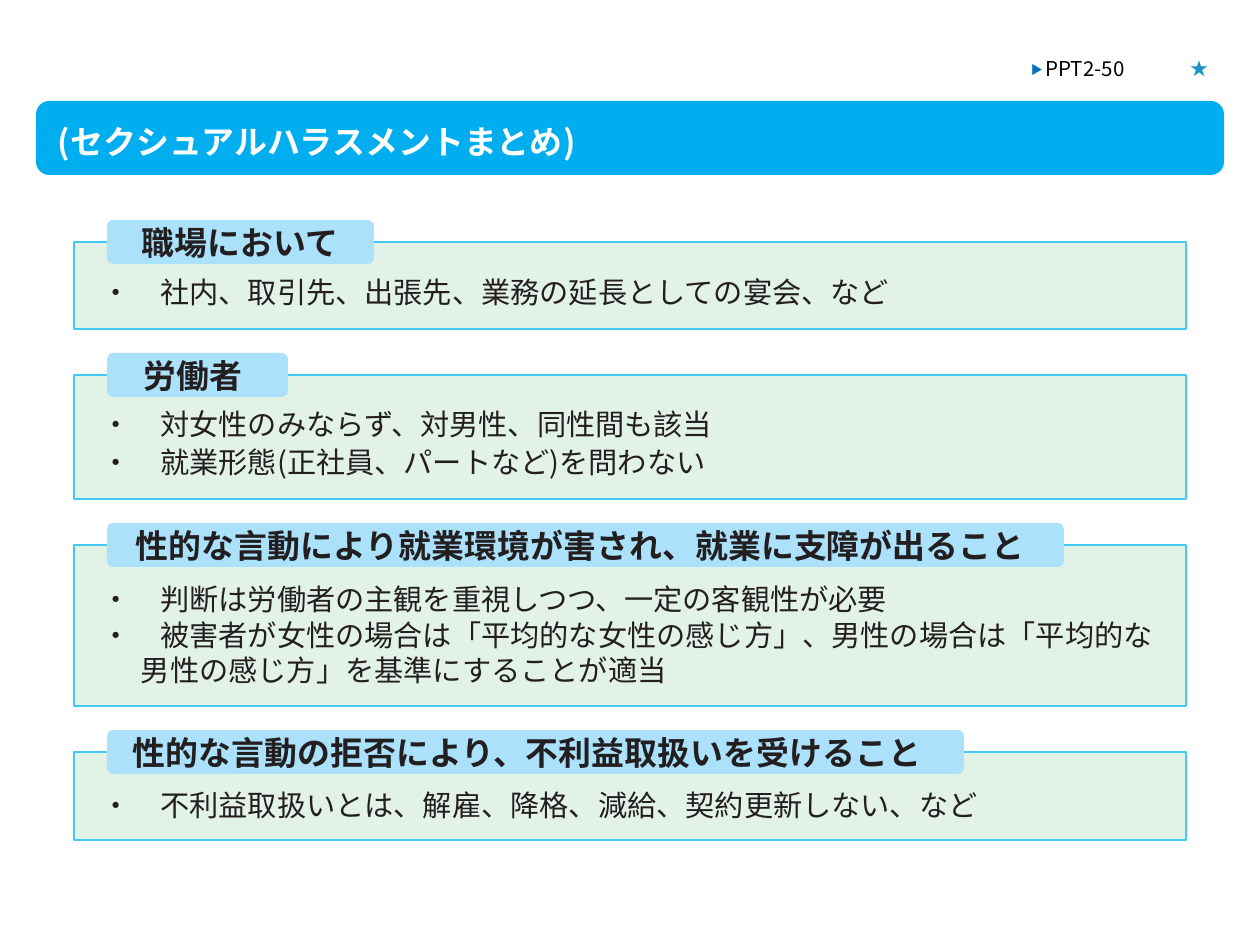
from dataclasses import dataclass

from lxml.etree import SubElement
from pptx import Presentation
from pptx.dml.color import RGBColor
from pptx.enum.shapes import MSO_SHAPE
from pptx.enum.text import MSO_ANCHOR, MSO_AUTO_SIZE, PP_ALIGN
from pptx.oxml.ns import qn
from pptx.util import Pt

EMU_PER_PX = 914400 / 126
FONT = "Noto Sans CJK JP"
COLORS = {
    "banner": "00AEEF",
    "panel": "E3F2E7",
    "border": "44C8F4",
    "tab": "ABE1FA",
    "ink": "231F20",
    "white": "FFFFFF",
    "black": "000000",
    "arrow": "0070C0",
    "star": "1B93C9",
}
PANEL_LEFT, PANEL_WIDTH = 74, 1112
TAB_LEFT, TAB_HEIGHT, TAB_RISE = 107, 44, 22
HANGING = 39


@dataclass(frozen=True)
class Section:
    heading: str
    points: tuple[str, ...]
    top: int
    height: int
    tab_width: int
    tab_inset: int
    text_inset: int
    gap: float = 0


SECTIONS = (
    Section("職場において", ("社内、取引先、出張先、業務の延長としての宴会、など",),
            242, 87, 267, 33, 32),
    Section("労働者",
            ("対女性のみならず、対男性、同性間も該当",
             "就業形態(正社員、パートなど)を問わない"),
            375, 124, 181, 35, 31, 1.2),
    Section("性的な言動により就業環境が害され、就業に支障が出ること",
            ("判断は労働者の主観を重視しつつ、一定の客観性が必要",
             "被害者が女性の場合は「平均的な女性の感じ方」、男性の場合は"
             "「平均的な男性の感じ方」を基準にすることが適当"),
            545, 161, 957, 27, 36),
    Section("性的な言動の拒否により、不利益取扱いを受けること",
            ("不利益取扱いとは、解雇、降格、減給、契約更新しない、など",),
            752, 88, 857, 24, 35),
)


def px(n: int) -> int:
    return round(n * EMU_PER_PX)


def rgb(name: str) -> RGBColor:
    return RGBColor.from_string(COLORS[name])


def style_run(r, size: float, color: str, bold: bool = False) -> None:
    r.font.size = Pt(size)
    r.font.bold = bold
    r.font.color.rgb = rgb(color)
    r.font.name = FONT
    SubElement(r._r.get_or_add_rPr(), qn("a:ea"), typeface=FONT)


def style_paragraph(p, size: float, spacing: float, color: str, bold: bool = False) -> None:
    p.alignment = PP_ALIGN.LEFT
    p.line_spacing = Pt(spacing)
    p.space_before = Pt(0)
    for r in p.runs:
        style_run(r, size, color, bold)


def set_frame(tf, anchor: MSO_ANCHOR, left: int = 0, top: int = 0, right: int = 0) -> None:
    tf.word_wrap = True
    tf.auto_size = MSO_AUTO_SIZE.NONE
    tf.vertical_anchor = anchor
    tf.margin_left, tf.margin_top, tf.margin_right = px(left), px(top), px(right)
    tf.margin_bottom = 0


def add_block(slide, kind: MSO_SHAPE, left: int, top: int, width: int, height: int,
              fill: str, radius: int = 0):
    sp = slide.shapes.add_shape(kind, px(left), px(top), px(width), px(height))
    sp.shadow.inherit = False
    sp.fill.solid()
    sp.fill.fore_color.rgb = rgb(fill)
    sp.line.fill.background()
    if radius:
        sp.adjustments[0] = round(radius / height, 2)
    return sp


def add_label(slide, left: int, top: int, width: int, height: int, text: str):
    tf = slide.shapes.add_textbox(px(left), px(top), px(width), px(height)).text_frame
    set_frame(tf, MSO_ANCHOR.TOP)
    p = tf.paragraphs[0]
    p.text = text
    return p


def add_title(slide) -> None:
    add_block(slide, MSO_SHAPE.ROUNDED_RECTANGLE, 36, 101, 1188, 74, "banner", 13)
    sp = slide.shapes.title
    sp.left, sp.top, sp.width, sp.height = px(58), px(120), px(810), px(42)
    tf = sp.text_frame
    tf.text = "(セクシュアルハラスメントまとめ)"
    set_frame(tf, MSO_ANCHOR.MIDDLE)
    style_paragraph(tf.paragraphs[0], 18.8, 22.5, "white", True)
    slide.shapes._spTree.append(sp._element)


def add_section(slide, s: Section) -> None:
    panel = add_block(slide, MSO_SHAPE.RECTANGLE, PANEL_LEFT, s.top, PANEL_WIDTH,
                      s.height, "panel")
    panel.line.color.rgb = rgb("border")
    panel.line.width = Pt(1.25)
    tf = panel.text_frame
    tf.text = "\n".join(f"・　{point}" for point in s.points)
    set_frame(tf, MSO_ANCHOR.TOP, 28, s.text_inset, 24)
    for i, p in enumerate(tf.paragraphs):
        style_paragraph(p, 16.7, 20.3, "ink")
        if i:
            p.space_before = Pt(s.gap)
        pPr = p._p.get_or_add_pPr()
        pPr.set("marL", str(px(HANGING)))
        pPr.set("indent", str(-px(HANGING)))

    tab = add_block(slide, MSO_SHAPE.ROUNDED_RECTANGLE, TAB_LEFT, s.top - TAB_RISE,
                    s.tab_width, TAB_HEIGHT, "tab", 6)
    tf = tab.text_frame
    tf.text = s.heading
    set_frame(tf, MSO_ANCHOR.MIDDLE, s.tab_inset)
    style_paragraph(tf.paragraphs[0], 18.8, 22.5, "ink", True)


def add_page_mark(slide) -> None:
    p = add_label(slide, 1031, 55, 125, 26, "▶ ")
    p.add_run().text = "PPT2-50"
    style_paragraph(p, 11.7, 14.4, "black")
    arrow = p.runs[0]
    arrow.font.color.rgb = rgb("arrow")
    arrow._r.get_or_add_rPr().set("baseline", "9000")

    p = add_label(slide, 1190, 57, 32, 24, "★")
    style_paragraph(p, 10.3, 12.5, "star")


def main() -> None:
    prs = Presentation()
    prs.slide_width, prs.slide_height = px(1260), px(945)
    slide = prs.slides.add_slide(prs.slide_layouts[5])
    add_title(slide)
    for section in SECTIONS:
        add_section(slide, section)
    add_page_mark(slide)
    prs.save("out.pptx")


if __name__ == "__main__":
    main()
